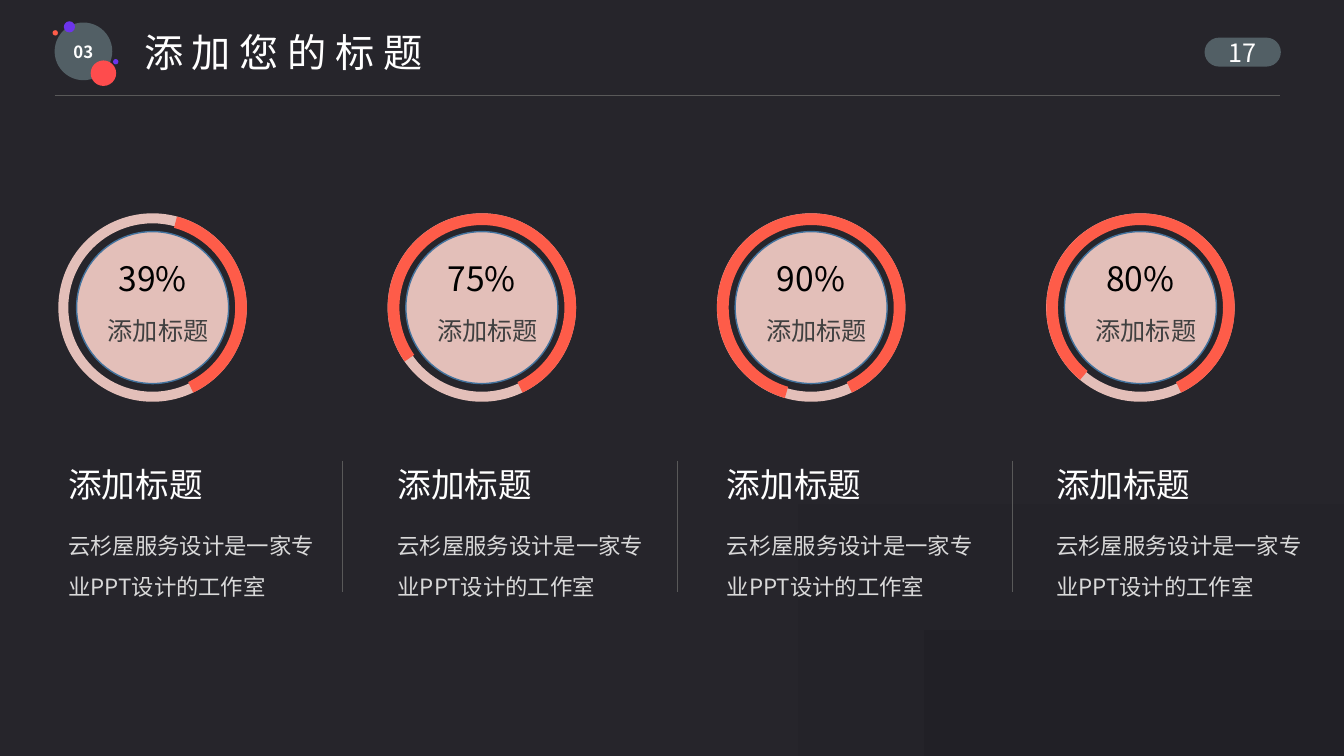
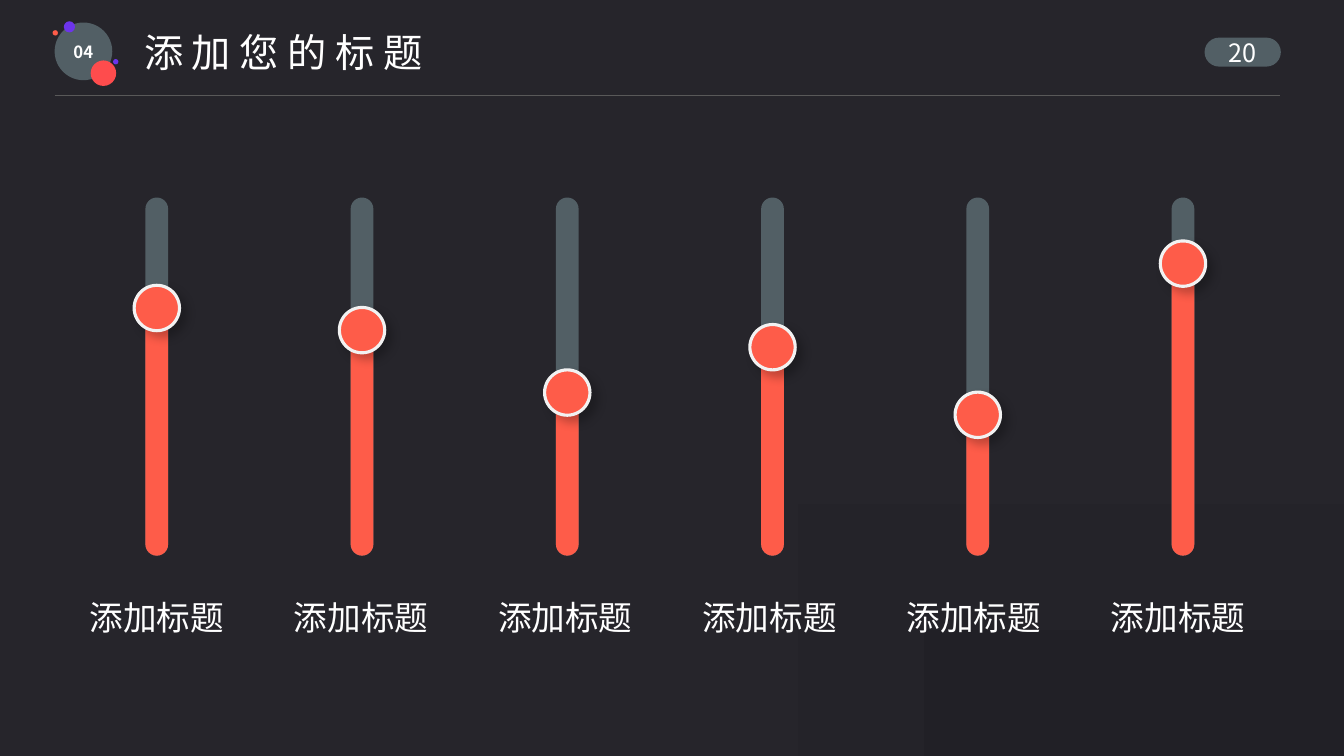
from lxml.etree import SubElement
from pptx import Presentation
from pptx.dml.color import RGBColor
from pptx.enum.shapes import MSO_CONNECTOR, MSO_SHAPE
from pptx.enum.text import MSO_ANCHOR, MSO_AUTO_SIZE, PP_ALIGN
from pptx.oxml.ns import qn
from pptx.util import Pt

FONT = "Noto Sans CJK SC"
WHITE, BLACK, GRAY, LIGHT_GRAY = "FFFFFF", "000000", "404040", "D9D9D9"
SLATE, CORAL, RED, VIOLET, PINK = "525F65", "FE5C49", "FE4C4D", "6C34EB", "E3BFB9"
RULE, DISC_EDGE, KNOB_EDGE = "595959", "43739E", "F2F2F2"
BACKGROUND_STOPS = ("212026", "26252B")

TITLE = "添 加 您 的 标 题"
LABEL = "添加标题"
BODY = "云杉屋服务设计是一家专业PPT设计的工作室"

BADGE_DOTS = [
    (64.8, 43.2, 18.2, RED),
    (45.6, 15.2, 8, VIOLET),
    (80.8, 42.2, 3.8, VIOLET),
    (37.6, 21.6, 3.8, CORAL),
]

GAUGES = [("39%", 180), ("75%", 40.07), ("90%", 1.27), ("80%", 24.88)]
GAUGE_LEFT, GAUGE_TOP, GAUGE_STEP = 41.7, 152.4, 235.2
RING_SIZE, DISC_SIZE = 134.6, 108.6
ARC_END, ARC_ROTATION = 319.5, 105
ANGLE_UNIT = 0.6
DIVIDER_LEFT, DIVIDER_STEP = 244.8, 239

KNOB_CENTERS = [220, 235.8, 280.4, 248, 296.3, 188.3]
SLIDER_CENTER, SLIDER_STEP, LABEL_STEP = 112, 146.6, 145.9
TRACK_TOP, TRACK_BOTTOM, TRACK_WIDTH = 141.1, 396.9, 16.2
KNOB_SIZE, LABEL_WIDTH = 32.4, 139


def color(value):
    """Turn a hex string into a colour."""
    return RGBColor.from_string(value)


def set_values(target, values):
    """Set each named attribute of the target."""
    for name, value in values.items():
        setattr(target, name, value)


def write_text(frame, text, size, text_color, bold=False, **paragraph_format):
    """Write one formatted paragraph into a text frame."""
    paragraph = frame.paragraphs[0]
    set_values(paragraph, paragraph_format)
    run = paragraph.add_run()
    run.text = text
    set_values(run.font, {"name": FONT, "size": Pt(size), "bold": bold})
    run.font.color.rgb = color(text_color)
    SubElement(run._r.get_or_add_rPr(), qn("a:ea"), typeface=FONT)


def add_text(shapes, box, text, size, text_color, wrap=True, **paragraph_format):
    """Add a text box that grows with its text."""
    frame = shapes.add_textbox(*map(Pt, box)).text_frame
    set_values(frame, {"word_wrap": wrap, "auto_size": MSO_AUTO_SIZE.SHAPE_TO_FIT_TEXT})
    write_text(frame, text, size, text_color, **paragraph_format)


def add_shape(shapes, kind, box, fill, edge=None, edge_width=1, adjustments=()):
    """Add a flat preset shape, outlined only when an edge colour is given."""
    shape = shapes.add_shape(kind, *map(Pt, box))
    shape.shadow.inherit = False
    shape.fill.solid()
    shape.fill.fore_color.rgb = color(fill)
    if edge:
        shape.line.color.rgb = color(edge)
        shape.line.width = Pt(edge_width)
    else:
        shape.line.fill.background()
    for index, value in enumerate(adjustments):
        shape.adjustments[index] = value
    return shape


def add_pill(shapes, box, fill):
    """Add a bar with fully rounded ends."""
    return add_shape(shapes, MSO_SHAPE.ROUNDED_RECTANGLE, box, fill, adjustments=[0.5])


def add_circle(shapes, left, top, size, fill, edge=None, edge_width=1):
    """Add a circle."""
    box = (left, top, size, size)
    return add_shape(shapes, MSO_SHAPE.OVAL, box, fill, edge, edge_width)


def label_shape(shape, text, size, bold=False):
    """Centre white text in a shape."""
    frame = shape.text_frame
    set_values(frame, {"word_wrap": False, "vertical_anchor": MSO_ANCHOR.MIDDLE})
    write_text(frame, text, size, WHITE, bold, alignment=PP_ALIGN.CENTER)


def add_rule(shapes, start, end):
    """Add a thin straight line."""
    line = shapes.add_connector(MSO_CONNECTOR.STRAIGHT, *map(Pt, start + end))
    line.line.color.rgb = color(RULE)
    line.line.width = Pt(0.5)
    SubElement(line.element.spPr, qn("a:effectLst"))


def add_shadow(shape):
    """Give a shape a soft shadow to the lower right."""
    effects = shape.element.spPr.find(qn("a:effectLst"))
    shadow = SubElement(effects, qn("a:outerShdw"), blurRad=str(Pt(7)),
                        dist=str(Pt(5.9)), dir="2700000", algn="tl", rotWithShape="0")
    shade = SubElement(shadow, qn("a:srgbClr"), val=BLACK)
    SubElement(shade, qn("a:alpha"), val="23000")


def set_background(master):
    """Shade the master from its lower right corner."""
    fill = master.background.fill
    fill.gradient()
    for stop, value in zip(fill.gradient_stops, BACKGROUND_STOPS):
        stop.color.rgb = color(value)
    gradient = master.element.find(".//" + qn("a:gradFill"))
    gradient.remove(gradient.find(qn("a:lin")))
    shading = SubElement(gradient, qn("a:path"), path="rect")
    SubElement(shading, qn("a:fillToRect"), l="100000", t="100000")


def add_slide(presentation, section, page):
    """Add a slide with badge, title, page number and rule."""
    shapes = presentation.slides.add_slide(presentation.slide_layouts[6]).shapes
    add_rule(shapes, (39, 68.2), (914.4, 68.2))
    label_shape(add_pill(shapes, (860.4, 26.9, 54.5, 20.7), SLATE), page, 18)
    badge = shapes.add_group_shape().shapes
    label_shape(add_circle(badge, 39, 16.1, 41.2, SLATE), section, 12, True)
    for dot in BADGE_DOTS:
        add_circle(badge, *dot)
    add_text(shapes, (95.8, 16.4, 226, 41.2), TITLE, 28, WHITE, wrap=False)
    return shapes


def add_gauge(shapes, left, percent, arc_start):
    """Add a ring gauge with its value and caption."""
    gauge = shapes.add_group_shape().shapes
    ring_box = (left, GAUGE_TOP, RING_SIZE, RING_SIZE)
    add_shape(gauge, MSO_SHAPE.DONUT, ring_box, PINK, adjustments=[0.053])
    arc = add_shape(gauge, MSO_SHAPE.BLOCK_ARC, ring_box, CORAL, adjustments=[
        arc_start * ANGLE_UNIT, ARC_END * ANGLE_UNIT, 0.062])
    arc.rotation = ARC_ROTATION
    inset = (RING_SIZE - DISC_SIZE) / 2
    add_circle(gauge, left + inset, GAUGE_TOP + inset, DISC_SIZE, PINK, DISC_EDGE)
    add_text(gauge, (left + 32.4, 180.7, 69.8, 36), percent, 24, BLACK,
             alignment=PP_ALIGN.CENTER)
    add_text(gauge, (left + 22, 221.8, 98.6, 28.8), LABEL, 18, GRAY,
             alignment=PP_ALIGN.CENTER)


def add_description(shapes, left):
    """Add a heading above a short paragraph."""
    description = shapes.add_group_shape().shapes
    add_text(description, (left, 327.6, 139, 36), LABEL, 24, WHITE)
    add_text(description, (left, 367.2, 190.8, 65.5), BODY, 16, LIGHT_GRAY, line_spacing=1.5)


def add_slider(shapes, center, knob_center):
    """Add a vertical slider filled up to its knob."""
    left, fill_top = center - TRACK_WIDTH / 2, knob_center + 6
    for top, fill in ((TRACK_TOP, SLATE), (fill_top, CORAL)):
        add_pill(shapes, (left, top, TRACK_WIDTH, TRACK_BOTTOM - top), fill)
    radius = KNOB_SIZE / 2
    add_shadow(add_circle(shapes, center - radius, knob_center - radius, KNOB_SIZE,
                          CORAL, KNOB_EDGE, 2.25))


def build_gauges(presentation):
    """Build the slide of ring gauges."""
    shapes = add_slide(presentation, "03", "17")
    for index, (percent, arc_start) in enumerate(GAUGES):
        left = GAUGE_LEFT + index * GAUGE_STEP
        add_gauge(shapes, left, percent, arc_start)
        add_description(shapes, left)
    for index in range(len(GAUGES) - 1):
        divider = DIVIDER_LEFT + index * DIVIDER_STEP
        add_rule(shapes, (divider, 329), (divider, 422.6))


def build_sliders(presentation):
    """Build the slide of vertical sliders."""
    shapes = add_slide(presentation, "04", "20")
    for index, knob_center in enumerate(KNOB_CENTERS):
        add_slider(shapes, SLIDER_CENTER + index * SLIDER_STEP, knob_center)
        label_left = SLIDER_CENTER + index * LABEL_STEP - LABEL_WIDTH / 2
        add_text(shapes, (label_left, 422.6, LABEL_WIDTH, 36), LABEL, 24, WHITE,
                 alignment=PP_ALIGN.CENTER)


def main():
    """Build and save the presentation."""
    presentation = Presentation()
    set_values(presentation, {"slide_width": Pt(960), "slide_height": Pt(540)})
    set_background(presentation.slide_master)
    build_gauges(presentation)
    build_sliders(presentation)
    presentation.save("out.pptx")


if __name__ == "__main__":
    main()
